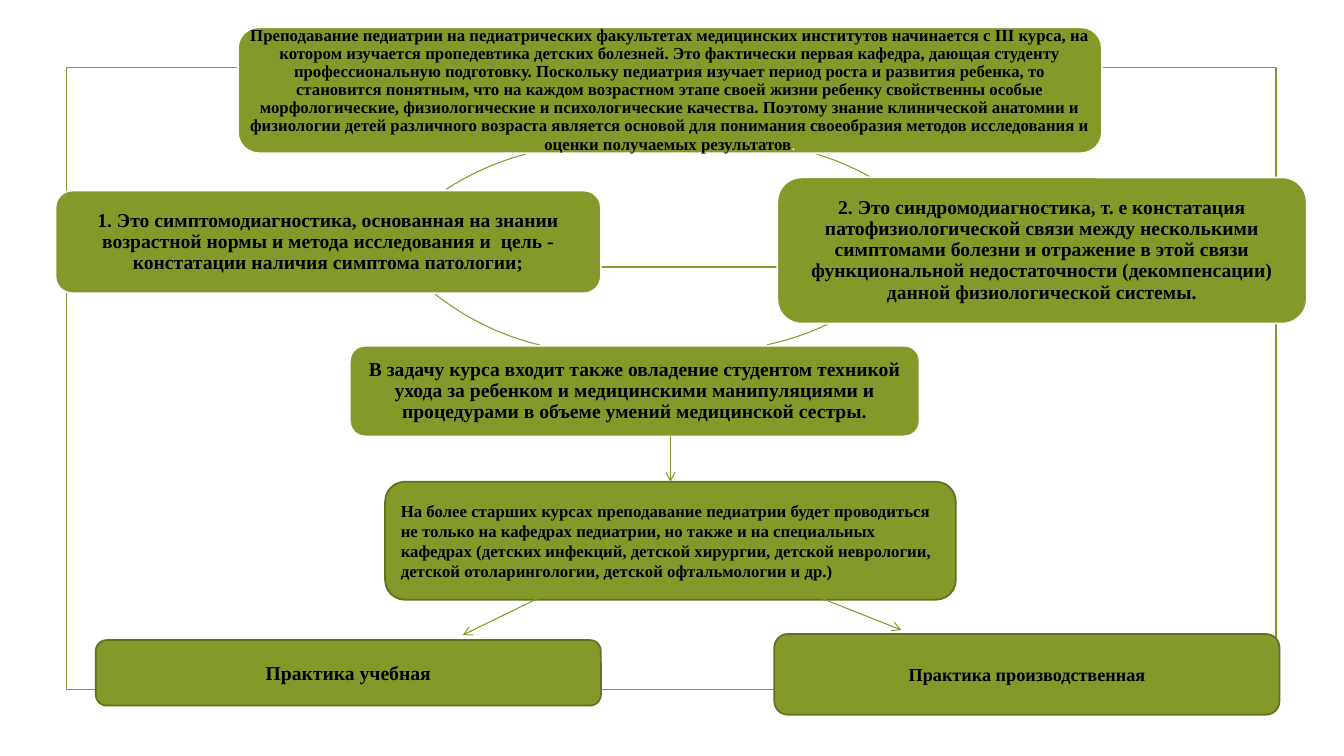
from math import atan2, degrees

from lxml.etree import SubElement
from pptx import Presentation
from pptx.dml.color import RGBColor
from pptx.enum.shapes import MSO_CONNECTOR, MSO_SHAPE
from pptx.enum.text import MSO_ANCHOR, PP_ALIGN
from pptx.oxml.ns import qn
from pptx.util import Inches, Pt

GREEN, DARK_GREEN, WHITE, BLACK = "83992A", "61711F", "FFFFFF", "000000"
FONT = "Times New Roman"
ARC_SIZE = 5.43
FRAME = (0.66, 0.67, 12, 6.17)
CROSSBAR = ((1.53, 2.65), (11.81, 2.65))

ARCS = [
    ((4.59, 1.41), (8.1, 1.52), (8.65, 1.76)),
    ((4.33, -1.95), (8.23, 3.21), (7.61, 3.43)),
    ((3.28, -1.93), (5.36, 3.42), (4.32, 2.91)),
    ((3.19, 1.44), (4.42, 1.88), (5.22, 1.53)),
]

CYCLE_STEPS = [
    ((2.36, 0.27, 8.57, 1.25), 0.05, [
        ("Преподавание педиатрии на педиатрических факультетах медицинских институтов "
         "начинается с III курса, на котором изучается пропедевтика детских болезней. "
         "Это фактически первая кафедра, дающая студенту профессиональную подготовку. "
         "Поскольку педиатрия изучает период роста и развития ребенка, то становится "
         "понятным, что на каждом возрастном этапе своей жизни ребенку свойственны особые "
         "морфологические, физиологические и психологические качества. Поэтому знание "
         "клинической анатомии и физиологии детей различного возраста является основой для "
         "понимания своеобразия методов исследования и оценки получаемых результатов",
         12, BLACK, True),
        (".", 11, WHITE, False)]),
    ((7.71, 1.76, 5.25, 1.45), 0.06, [
        ("2. Это синдромодиагностика, т. е констатация патофизиологической связи между "
         "несколькими симптомами болезни и отражение в этой связи функциональной "
         "недостаточности (декомпенсации) данной физиологической системы.",
         14, BLACK, True)]),
    ((3.47, 3.43, 5.65, 0.9), 0.06, [
        ("В задачу курса входит также овладение студентом техникой ухода за ребенком и "
         "медицинскими манипуляциями и процедурами в объеме умений медицинской сестры.",
         14, BLACK, True)]),
    ((0.55, 1.89, 5.41, 1.02), 0.06, [
        ("1. Это симптомодиагностика, основанная на знании возрастной нормы и метода "
         "исследования и  цель - констатации наличия симптома патологии;",
         14, BLACK, True)]),
]

SENIOR_COURSES = ((3.82, 4.78, 5.66, 1.17), [
    ("На более старших курсах преподавание педиатрии будет проводиться не только на "
     "кафедрах педиатрии, но также и на специальных кафедрах (детских инфекций, детской "
     "хирургии, детской неврологии, детской отоларингологии, детской офтальмологии и др.)",
     12, BLACK, True)])

PRACTICES = [
    ((0.95, 6.35, 5.01, 0.65), [("Практика учебная", 14, BLACK, True)]),
    ((7.68, 6.29, 5.01, 0.8), [("Практика производственная", 13, BLACK, True)]),
]

TO_SENIOR = ((6.65, 4.33), (6.65, 4.78))
TO_PRACTICES = [((5.78, 5.72), (4.59, 6.3)), ((7.58, 5.71), (8.94, 6.25))]


def colour(hex_text):
    return RGBColor.from_string(hex_text)


def add_outline(kind, box, line, width):
    shape = slide.shapes.add_shape(kind, *map(Inches, box))
    shape.shadow.inherit = False
    shape.fill.background()
    shape.line.color.rgb = colour(line)
    shape.line.width = Pt(width)
    return shape


def add_arc(corner, start, end):
    arc = add_outline(MSO_SHAPE.ARC, (*corner, ARC_SIZE, ARC_SIZE), GREEN, 0.75)
    centre_x, centre_y = (edge + ARC_SIZE / 2 for edge in corner)
    for index, (x, y) in enumerate((start, end)):
        angle = degrees(atan2(y - centre_y, x - centre_x)) % 360
        arc.adjustments[index] = angle * 0.6


def add_box(box, runs, line, align=PP_ALIGN.CENTER, inset=None, spacing=1.0):
    shape = add_outline(MSO_SHAPE.ROUNDED_RECTANGLE, box, line, 1.25)
    shape.fill.solid()
    shape.fill.fore_color.rgb = colour(GREEN)
    frame = shape.text_frame
    frame.word_wrap = True
    frame.vertical_anchor = MSO_ANCHOR.MIDDLE
    if inset is not None:
        frame.margin_left = frame.margin_right = Inches(inset)
        frame.margin_top = frame.margin_bottom = Inches(inset)
    paragraph = frame.paragraphs[0]
    paragraph.alignment = align
    paragraph.line_spacing = spacing
    for text, size, ink, bold in runs:
        run = paragraph.add_run()
        run.text = text
        run.font.name = FONT
        run.font.size = Pt(size)
        run.font.bold = bold
        run.font.color.rgb = colour(ink)
    return shape


def add_line(start, end, width, arrow=True):
    connector = slide.shapes.add_connector(
        MSO_CONNECTOR.STRAIGHT, *map(Inches, (*start, *end)))
    connector.line.color.rgb = colour(GREEN)
    connector.line.width = Pt(width)
    if arrow:
        SubElement(connector.line._get_or_add_ln(), qn("a:tailEnd"), type="arrow")
    SubElement(connector._element.spPr, qn("a:effectLst"))
    return connector


deck = Presentation()
deck.slide_width, deck.slide_height = Inches(13.33), Inches(7.5)
slide = deck.slides.add_slide(deck.slide_layouts[6])

add_outline(MSO_SHAPE.RECTANGLE, FRAME, GREEN, 1.25)
add_line(*CROSSBAR, 1.25, arrow=False)
for arc_points in ARCS:
    add_arc(*arc_points)
for step_box, step_inset, step_runs in CYCLE_STEPS:
    add_box(step_box, step_runs, WHITE, inset=step_inset, spacing=0.9)

senior_courses = add_box(*SENIOR_COURSES, DARK_GREEN, align=PP_ALIGN.LEFT)
add_line(*TO_SENIOR, 0.75).end_connect(senior_courses, 0)
for practice_box, practice_runs in PRACTICES:
    add_box(practice_box, practice_runs, DARK_GREEN)
for arrow_ends in TO_PRACTICES:
    add_line(*arrow_ends, 0.75)

deck.save("out.pptx")
